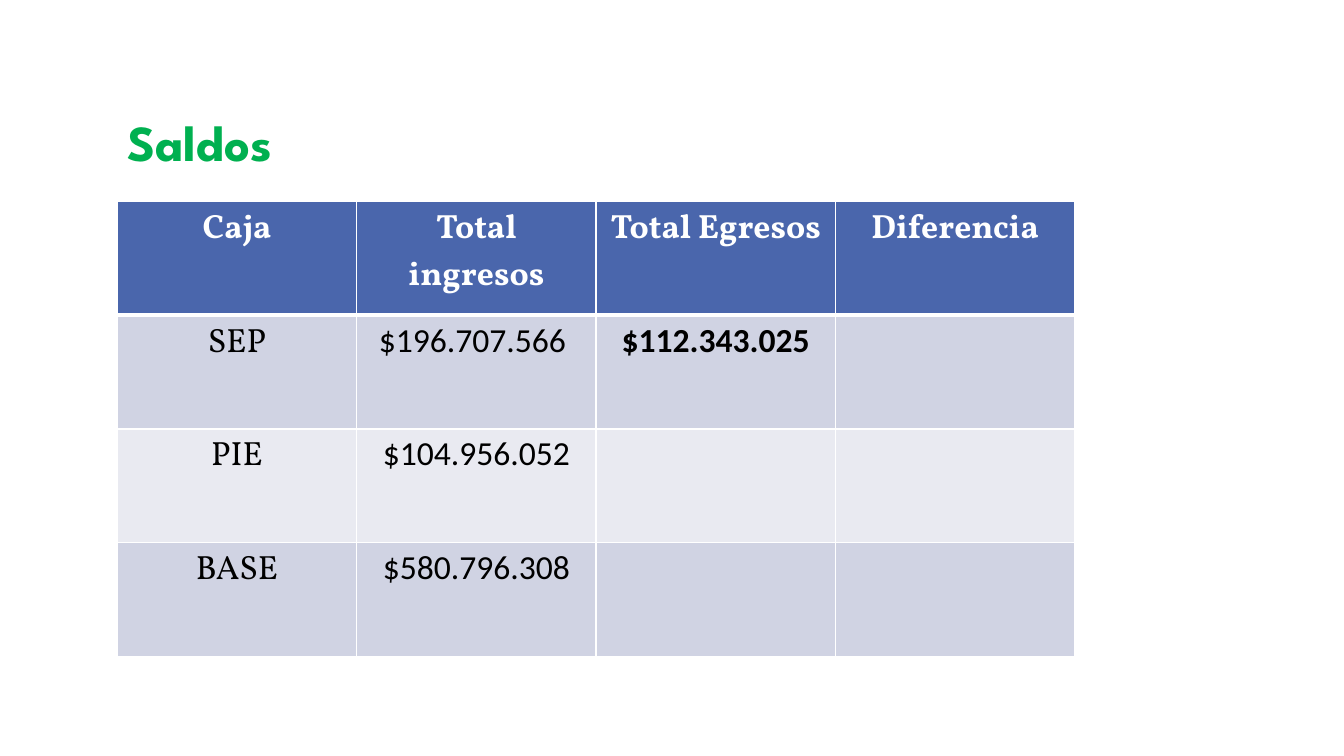
from itertools import product

from lxml import etree
from pptx import Presentation
from pptx import util as u
from pptx.dml.color import RGBColor
from pptx.enum import text
from pptx.oxml import ns

TITLE = "Saldos"
HEADINGS = ["Caja", "Total ingresos", "Total Egresos", "Diferencia"]
BALANCES = [
    ["SEP", "$196.707.566 ", "$112.343.025", ""],
    ["PIE", "$104.956.052", "", ""],
    ["BASE", "$580.796.308", "", ""],
]
BOLD_AMOUNTS = {"$112.343.025"}

THEME = {
    "title_font": "League Spartan",
    "label_font": "Vollkorn",
    "amount_font": "Calibri",
    "title_size": 36,
    "cell_size": 24,
    "title": "00B050",
    "white": "FFFFFF",
    "black": "000000",
    "header": "4A66AC",
    "bands": ["D0D3E3", "E9EAF1"],
}

LEFT, WIDTH = 83.8, 684
TITLE_TOP, TITLE_HEIGHT = 41.75, 84.25
TABLE_TOP, ROW_HEIGHT = 144, 81.2
THIN, THICK = 1, 3


def write(frame, words, *, font, size, color, bold=False, align=None, spacing=None):
    para = frame.paragraphs[0]
    para.alignment = align
    para.line_spacing = spacing
    span = para.add_run()
    span.text = words
    span.font.name = font
    span.font.size = u.Pt(size)
    span.font.bold = bold
    span.font.color.rgb = RGBColor.from_string(color)


def draw_borders(cell, widths):
    properties = cell._tc.get_or_add_tcPr()
    for index, (side, width) in enumerate(widths.items()):
        line = etree.Element(ns.qn(f"a:ln{side}"), w=str(u.Pt(width)))
        fill = etree.SubElement(line, ns.qn("a:solidFill"))
        etree.SubElement(fill, ns.qn("a:srgbClr"), val=THEME["white"])
        properties.insert(index, line)


def add_title(page):
    title = page.shapes.title
    title.left, title.top = u.Pt(LEFT), u.Pt(TITLE_TOP)
    title.width, title.height = u.Pt(WIDTH), u.Pt(TITLE_HEIGHT)
    title.text_frame.vertical_anchor = text.MSO_ANCHOR.BOTTOM
    write(title.text_frame, TITLE, font=THEME["title_font"],
          size=THEME["title_size"], color=THEME["title"], bold=True,
          align=text.PP_ALIGN.LEFT, spacing=0.8)


def add_balances(page):
    rows = [HEADINGS, *BALANCES]
    table = page.shapes.add_table(
        len(rows), len(HEADINGS), u.Pt(LEFT), u.Pt(TABLE_TOP),
        u.Pt(WIDTH), u.Pt(ROW_HEIGHT * len(rows))).table
    for row, column in product(range(len(rows)), range(len(HEADINGS))):
        cell, words = table.cell(row, column), rows[row][column]
        heading = row == 0
        color = THEME["header"] if heading else THEME["bands"][(row - 1) % 2]
        cell.fill.solid()
        cell.fill.fore_color.rgb = RGBColor.from_string(color)
        draw_borders(cell, {"L": THIN, "R": THIN,
                            "T": THICK if row == 1 else THIN,
                            "B": THICK if heading else THIN})
        if words:
            label = heading or column == 0
            write(cell.text_frame, words,
                  font=THEME["label_font" if label else "amount_font"],
                  size=THEME["cell_size"],
                  color=THEME["white" if heading else "black"],
                  bold=heading or words in BOLD_AMOUNTS,
                  align=text.PP_ALIGN.CENTER)


def main():
    deck = Presentation()
    deck.slide_width, deck.slide_height = u.Pt(960), u.Pt(540)
    page = deck.slides.add_slide(deck.slide_layouts[5])
    add_title(page)
    add_balances(page)
    deck.save("out.pptx")


if __name__ == "__main__":
    main()
